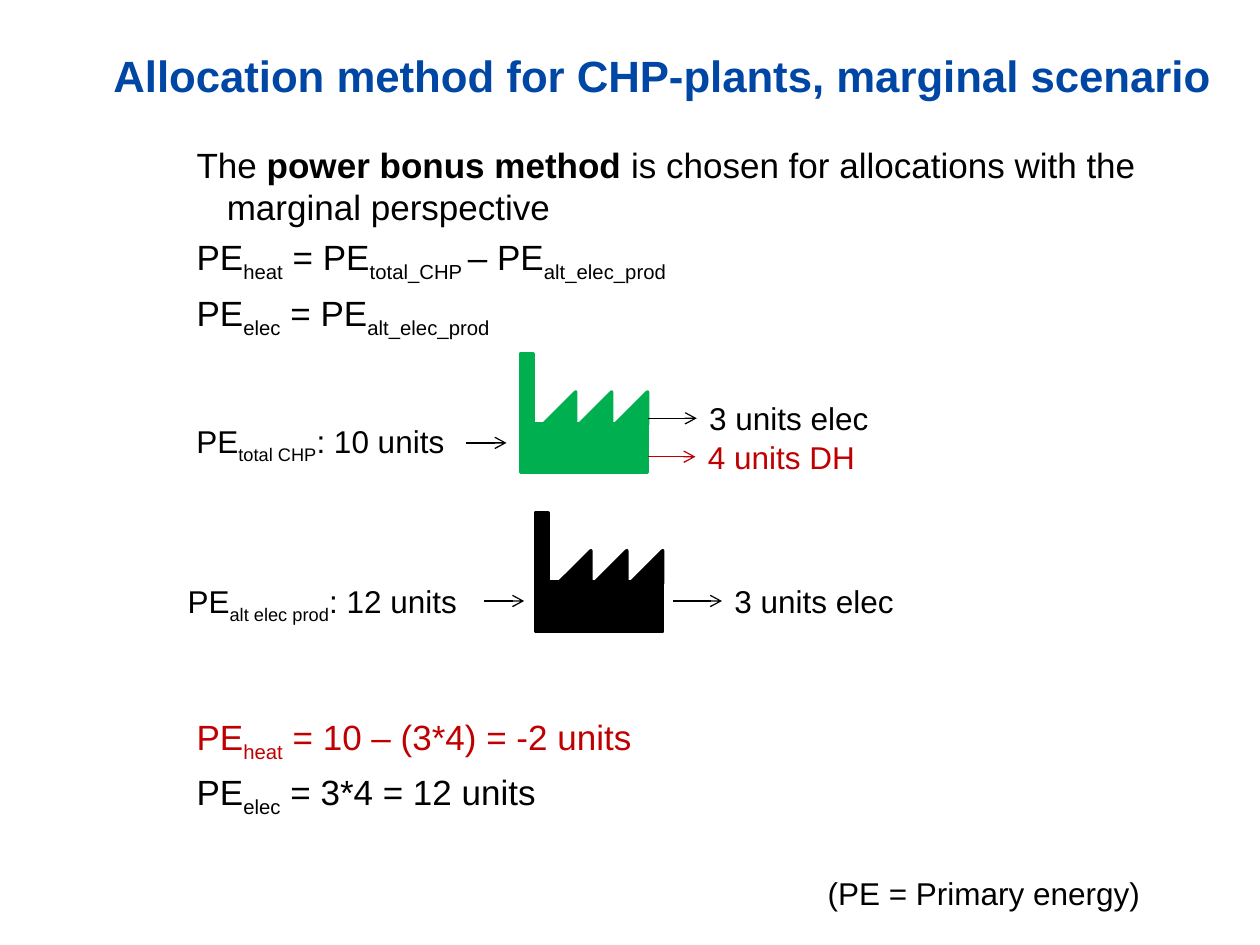
"""Builds a slide on the power bonus method for allocating primary energy in CHP plants."""
import lxml.etree
import pptx
import pptx.dml.color
import pptx.enum.shapes
import pptx.enum.text
import pptx.oxml.ns
import pptx.util

COLORS = {"title": "0046A4", "text": "000000", "heat": "C00000", "plant": "00B050"}
SHAPES = pptx.enum.shapes.MSO_SHAPE


class Slide:
    """Holds the style and the current slide, measured on a grid of 100 columns by 75 rows."""

    font = "Arial"

    def __init__(self, deck):
        self.page = deck.slides.add_slide(deck.slide_layouts[1])
        self.column = deck.slide_width / 100
        self.row = deck.slide_height / 75

    def spot(self, column, row):
        return [round(column * self.column), round(row * self.row)]

    def area(self, left, top, width, height):
        return self.spot(left, top) + self.spot(width, height)

    def color(self, name):
        return pptx.dml.color.RGBColor.from_string(COLORS[name])

    def move(self, holder, area):
        holder.left, holder.top, holder.width, holder.height = self.area(*area)
        holder.text_frame.word_wrap = True
        holder.text_frame.auto_size = pptx.enum.text.MSO_AUTO_SIZE.NONE
        return holder.text_frame

    def add_spans(self, para, texts, color, size, bold=False, marked="subscript"):
        """Adds the texts as runs, marking every second one."""
        for index, text in enumerate(texts):
            span = para.add_run()
            span.text = text
            mark = marked if index % 2 else None
            span.font.name = self.font
            span.font.size = pptx.util.Pt(size)
            span.font.bold = bold or mark == "bold"
            span.font.color.rgb = self.color(color)
            if mark == "subscript":
                span.font._element.set("baseline", "-25000")

    def title(self, text, area):
        frame = self.move(self.page.shapes.title, area)
        frame.vertical_anchor = pptx.enum.text.MSO_ANCHOR.MIDDLE
        para = frame.paragraphs[0]
        para.alignment = pptx.enum.text.PP_ALIGN.LEFT
        self.add_spans(para, [text], "title", 25, bold=True)

    def body(self, lines, area):
        """Fills the body with (texts, colour, marking, space before) lines."""
        frame = self.move(self.page.placeholders[1], area)
        for index, (texts, color, marked, space) in enumerate(lines):
            para = frame.add_paragraph() if index else frame.paragraphs[0]
            properties = para._p.get_or_add_pPr()
            indent = round(2.4 * self.column)
            properties.set("marL", str(indent))
            properties.set("indent", str(-indent))
            lxml.etree.SubElement(properties, pptx.oxml.ns.qn("a:buNone"))
            para.space_before = pptx.util.Pt(space)
            self.add_spans(para, texts, color, 20, marked=marked)

    def label(self, texts, area, color="text"):
        box = self.page.shapes.add_textbox(*self.area(*area))
        box.text_frame.word_wrap = False
        box.text_frame.auto_size = pptx.enum.text.MSO_AUTO_SIZE.SHAPE_TO_FIT_TEXT
        self.add_spans(box.text_frame.paragraphs[0], texts, color, 18)
        return box

    def arrow(self, start, end, color="text"):
        line = self.page.shapes.add_connector(
            pptx.enum.shapes.MSO_CONNECTOR.STRAIGHT, *self.spot(*start), *self.spot(*end))
        line.line.color.rgb = self.color(color)
        line.line.width = pptx.util.Pt(0.75)
        outline = line.line._get_or_add_ln()
        lxml.etree.SubElement(outline, pptx.oxml.ns.qn("a:tailEnd"), type="arrow")
        lxml.etree.SubElement(line._element.spPr, pptx.oxml.ns.qn("a:effectLst"))
        return line

    def output(self, text, start, left, width, color="text"):
        """Draws a plant's output: a label joined to the arrow that leads to it."""
        box = self.label([text], (left, start[1] - 2, width, 4), color)
        self.arrow(start, (left, start[1]), color).end_connect(box, 1)

    def factory(self, left, top, color, hall):
        """Groups a chimney, a hall that starts at the given offset and three roof teeth."""
        group = self.page.shapes.add_group_shape()
        parts = [(SHAPES.RECTANGLE, 0, 0, 1, 9.4),
                 (SHAPES.RECTANGLE, hall, 5.5, 10.1 - hall, 3.9)]
        parts += [(SHAPES.RIGHT_TRIANGLE, 1.8 + 2.85 * tooth, 3, 2.6, 2.6)
                  for tooth in reversed(range(3))]
        for kind, across, down, width, height in parts:
            area = self.area(left + across, top + down, width, height)
            part = group.shapes.add_shape(kind, *area)
            part.rotation = 270 if kind == SHAPES.RIGHT_TRIANGLE else 0
            part.shadow.inherit = False
            part.fill.solid()
            part.fill.fore_color.rgb = self.color(color)
            part.line.color.rgb = self.color(color)
            part.line.width = pptx.util.Pt(2)


def main():
    deck = pptx.Presentation()
    deck.slide_width = pptx.util.Inches(10)
    deck.slide_height = pptx.util.Inches(7.5)
    slide = Slide(deck)

    slide.title("Allocation method for CHP-plants, marginal scenario", (8, 1.3, 90, 9.3))
    slide.body([
        (["The ", "power bonus method ",
          "is chosen for allocations with the marginal perspective"], "text", "bold", 0),
        (["PE", "heat", " = PE", "total_CHP ", "– PE", "alt_elec_prod"],
         "text", "subscript", 4.5),
        (["PE", "elec", " = PE", "alt_elec_prod"], "text", "subscript", 4.5),
        (["PE", "heat", " = 10 – (3*4) = -2 units"], "heat", "subscript", 215),
        (["PE", "elec", " = 3*4 = 12 units"], "text", "subscript", 4.5),
    ], (14.6, 10.9, 82.7, 49.5))

    slide.factory(41.3, 28.1, "plant", 1.1)
    slide.label(["PE", "total CHP", ": 10 units"], (14.6, 33, 24.2, 4))
    slide.arrow((37, 35.15), (40.2, 35.15))
    slide.output("3 units elec", (51.4, 33.2), 55.3, 14.8)
    slide.output("4 units DH", (51.4, 36.25), 55.2, 13.8, "heat")

    slide.factory(42.5, 40.7, "text", 0.5)
    slide.label(["PE", "alt elec prod", ": 12 units"], (13.9, 45.7, 25.2, 4))
    slide.arrow((38.4, 47.7), (41.6, 47.7))
    slide.output("3 units elec", (53.4, 47.7), 57.3, 14.8)

    slide.label(["(PE = Primary energy)"], (64.7, 68.9, 27.1, 4))
    deck.save("out.pptx")


if __name__ == "__main__":
    main()
